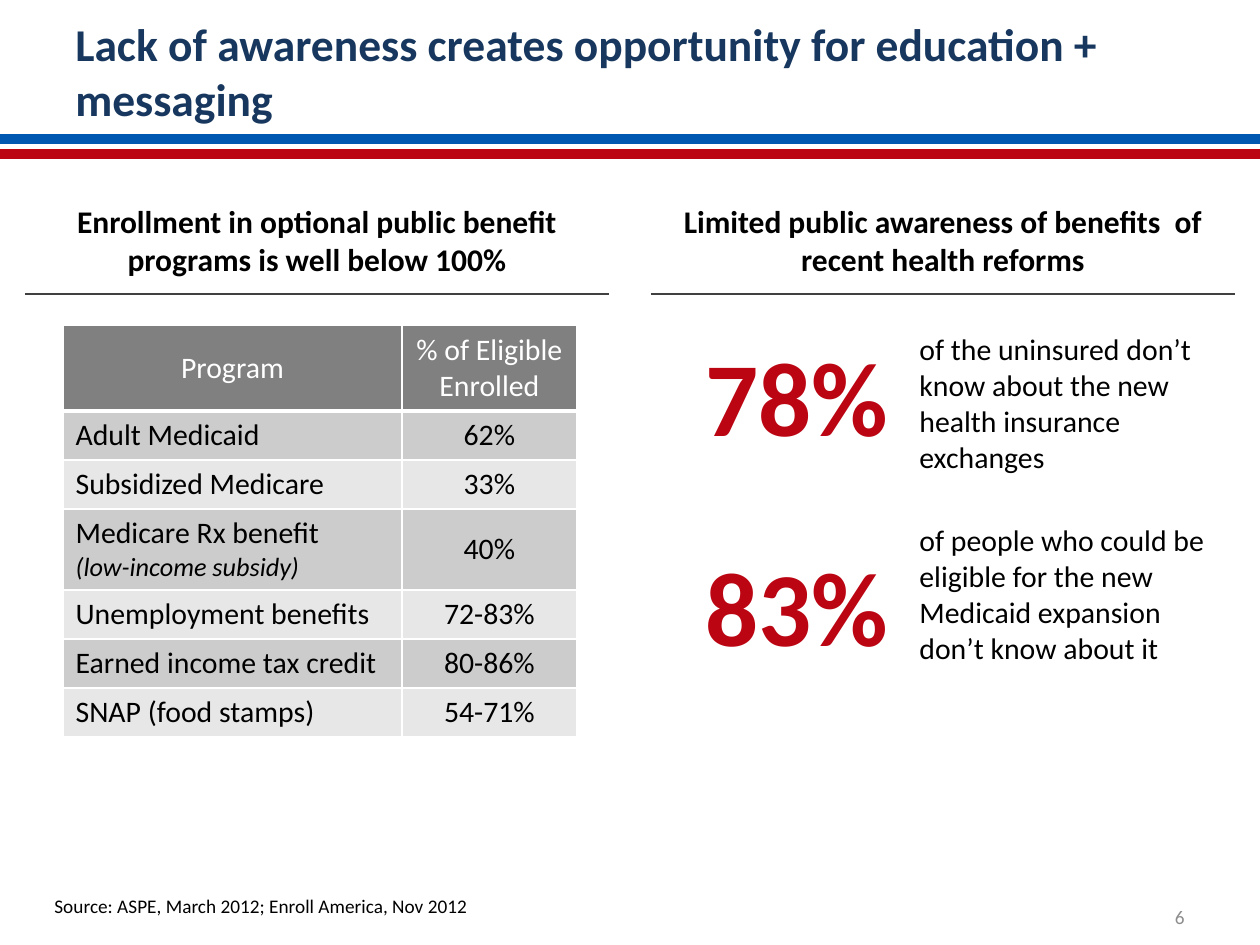
from dataclasses import dataclass

from lxml.etree import SubElement
from pptx import Presentation
from pptx.dml.color import RGBColor
from pptx.enum.shapes import MSO_CONNECTOR, MSO_SHAPE
from pptx.enum.text import MSO_ANCHOR as ANCHOR, PP_ALIGN as ALIGN
from pptx.oxml.ns import qn
from pptx.util import Pt

EMU_PER_PX = 914400 / 126
WIDTH, HEIGHT = 1260, 945


@dataclass(frozen=True)
class Theme:
    font: str = "Calibri"
    navy: str = "17375E"
    blue: str = "0058B0"
    red: str = "BB0512"
    white: str = "FFFFFF"
    black: str = "000000"
    rule: str = "404040"
    page: str = "8C8C8C"
    head_fill: str = "808080"
    bands: tuple = ("CCCCCC", "E7E7E7")
    title: int = 26
    heading: int = 18
    body: int = 17
    small: int = 15
    figure: int = 60
    footer: int = 11


T = Theme()

PROGRAMS = [
    (["Adult Medicaid"], "62%"),
    (["Subsidized Medicare"], "33%"),
    (["Medicare Rx benefit", "(low-income subsidy)"], "40%"),
    (["Unemployment benefits"], "72-83%"),
    (["Earned income tax credit"], "80-86%"),
    (["SNAP (food stamps)"], "54-71%"),
]
FINDINGS = [
    ("78%", "of the uninsured don’t know about the new health insurance exchanges"),
    ("83%", "of people who could be eligible for the new Medicaid expansion "
            "don’t know about it"),
]


def px(n):
    return round(n * EMU_PER_PX)


def rgb(value):
    return RGBColor.from_string(value)


def write(tf, lines, size=T.body, color=T.black, bold=False, align=ALIGN.LEFT,
          gap=0):
    """Fill a text frame, one paragraph a line, with gap points between them."""
    for i, line in enumerate(lines):
        p = tf.add_paragraph() if i else tf.paragraphs[0]
        p.alignment = align
        if i and gap:
            p.space_before = Pt(gap)
        r = p.add_run()
        r.text = line
        r.font.name, r.font.size, r.font.bold = T.font, Pt(size), bold
        r.font.color.rgb = rgb(color)


def add_text(s, box, lines, anchor=ANCHOR.TOP, **fmt):
    tf = s.shapes.add_textbox(*map(px, box)).text_frame
    tf.word_wrap = True
    tf.vertical_anchor = anchor
    write(tf, lines, **fmt)


def add_rule(s, x, y, w):
    ln = s.shapes.add_connector(MSO_CONNECTOR.STRAIGHT, px(x), px(y), px(x + w), px(y))
    ln.line.color.rgb = rgb(T.rule)
    ln.line.width = Pt(0.75)
    SubElement(ln._element.spPr, qn("a:effectLst"))


def add_banner(s, x, y, w):
    for dy, color in ((0, T.blue), (11, T.white), (15, T.red)):
        sp = s.shapes.add_shape(MSO_SHAPE.RECTANGLE, px(x), px(y + dy), px(w), px(6))
        sp.shadow.inherit = False
        sp.fill.solid()
        sp.fill.fore_color.rgb = sp.line.color.rgb = rgb(color)
        sp.line.width = Pt(2)


def add_heading(s, x, y, w, text):
    """Column heading with a rule below it."""
    add_rule(s, x, y + 73, w)
    add_text(s, (x, y, w, 63), [text], anchor=ANCHOR.BOTTOM, size=T.heading,
             bold=True, align=ALIGN.CENTER)


def style_cell(cell, fill, bottom=1):
    tc_pr = cell._tc.get_or_add_tcPr()
    for side, width in (("L", 1), ("R", 1), ("T", 1), ("B", bottom)):
        ln = SubElement(tc_pr, qn(f"a:ln{side}"), w=str(Pt(width)))
        SubElement(SubElement(ln, qn("a:solidFill")), qn("a:srgbClr"), val=T.white)
    cell.fill.solid()
    cell.fill.fore_color.rgb = rgb(fill)
    cell.vertical_anchor = ANCHOR.MIDDLE


def add_program_table(s, x, y):
    widths = (339, 175)
    heights = [86] + [49 if len(name) == 1 else 81 for name, _ in PROGRAMS]
    table = s.shapes.add_table(len(heights), len(widths), px(x), px(y),
                               px(sum(widths)), px(sum(heights))).table
    for col, w in zip(table.columns, widths):
        col.width = px(w)
    for row, h in zip(table.rows, heights):
        row.height = px(h)
    for c, lines in enumerate((["Program"], ["% of Eligible", "Enrolled"])):
        cell = table.cell(0, c)
        style_cell(cell, T.head_fill, bottom=3)
        write(cell.text_frame, lines, color=T.white, align=ALIGN.CENTER)
    for i, (name, share) in enumerate(PROGRAMS):
        for c, (lines, align) in enumerate(((name, ALIGN.LEFT), ([share], ALIGN.CENTER))):
            cell = table.cell(i + 1, c)
            style_cell(cell, T.bands[i % 2])
            write(cell.text_frame, lines, align=align)
            for p in cell.text_frame.paragraphs[1:]:
                p.runs[0].font.size = Pt(T.small)
                p.runs[0].font.italic = True


def add_findings(s, x, y):
    """Large figures on the left, their explanations on the right."""
    add_text(s, (x + 214, y, 321, 451), [text for _, text in FINDINGS], gap=27.5)
    for i, (figure, _) in enumerate(FINDINGS):
        add_text(s, (x, y + 210 * i, 220, 158), [figure], size=T.figure,
                 color=T.red, bold=True)


def add_footer(s, y):
    add_text(s, (42, y, 451, 37), ["Source: ASPE, March 2012; Enroll America, Nov 2012"],
             size=T.footer)
    add_text(s, (903, y + 7, 294, 44), ["6"], anchor=ANCHOR.MIDDLE, size=T.footer,
             color=T.page, align=ALIGN.RIGHT)


def main():
    prs = Presentation()
    prs.slide_width, prs.slide_height = px(WIDTH), px(HEIGHT)
    s = prs.slides.add_slide(prs.slide_layouts[6])
    add_banner(s, 0, 136, WIDTH)
    add_text(s, (63, 10, 1134, 158),
             ["Lack of awareness creates opportunity for education + messaging"],
             size=T.title, color=T.navy, bold=True)
    add_heading(s, 25, 221, 584,
                "Enrollment in optional public benefit programs is well below 100%")
    add_heading(s, 651, 221, 584,
                "Limited public awareness of benefits  of recent health reforms")
    add_program_table(s, 63, 325)
    add_findings(s, 693, 325)
    add_footer(s, 888)
    prs.save("out.pptx")


if __name__ == "__main__":
    main()
